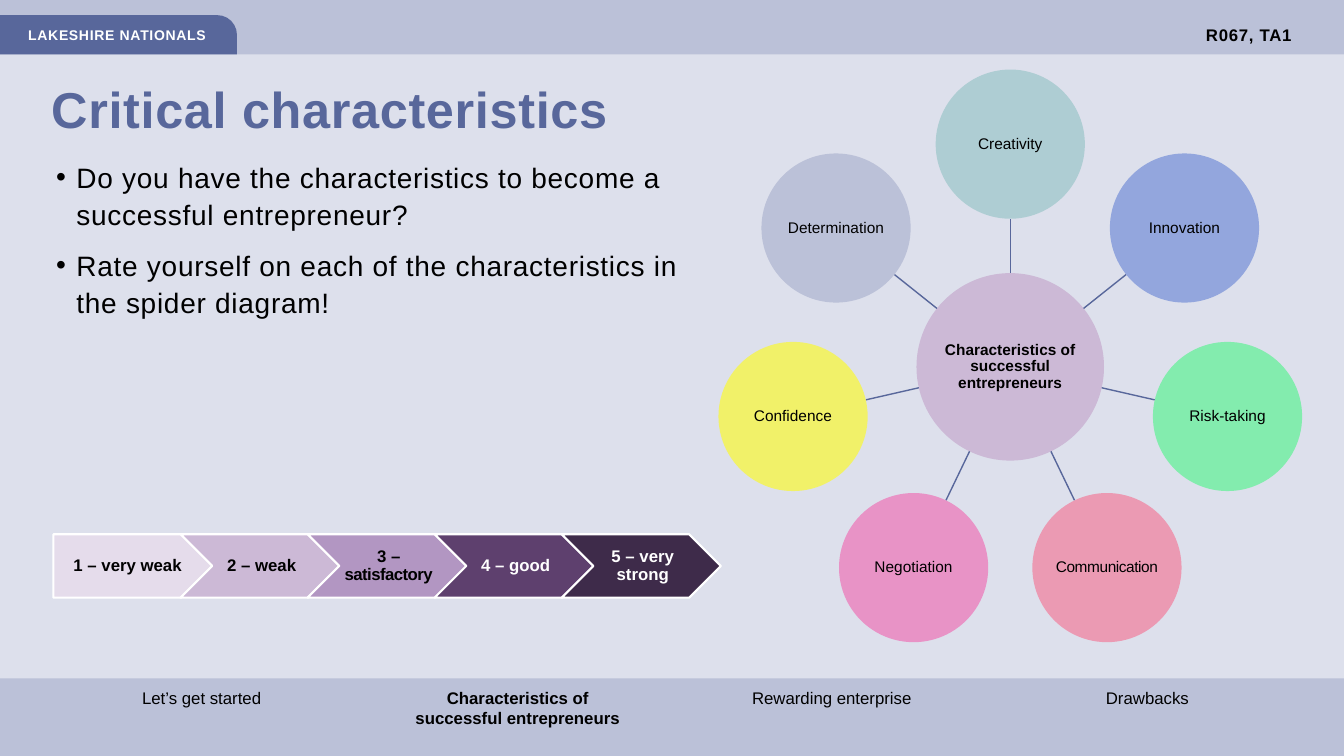
from math import cos, pi, sin

from pptx import Presentation
from pptx.dml.color import RGBColor
from pptx.enum import shapes, text
from pptx.oxml import parse_xml
from pptx.oxml.ns import nsdecls
from pptx.util import Inches, Pt

BACKGROUND, BAND, BLUE = "DDE0EC", "BBC1D8", "58679B"
BLACK, WHITE, LILAC = "000000", "FFFFFF", "CCB9D6"
SHAPE = shapes.MSO_SHAPE
ALIGN = text.PP_ALIGN
MIDDLE = text.MSO_ANCHOR.MIDDLE

presentation = Presentation()
presentation.slide_width = Inches(13.33)
presentation.slide_height = Inches(7.5)
slide = presentation.slides.add_slide(presentation.slide_layouts[6])
slide.background.fill.solid()
slide.background.fill.fore_color.rgb = RGBColor.from_string(BACKGROUND)


def add_block(kind, left, top, width, height, fill=None, line=None):
    """Add a flat preset shape, or a text box when kind is None."""
    box = [Inches(value) for value in (left, top, width, height)]
    if kind is None:
        shape = slide.shapes.add_textbox(*box)
    else:
        shape = slide.shapes.add_shape(kind, *box)
        shape.shadow.inherit = False
        shape.fill.solid()
        shape.fill.fore_color.rgb = RGBColor.from_string(fill)
        if line:
            shape.line.color.rgb = RGBColor.from_string(line)
            shape.line.width = Pt(1.5)
        else:
            shape.line.fill.background()
    shape.text_frame.word_wrap = True
    return shape


def write(shape, wording, size, color=BLACK, bold=False, align=ALIGN.LEFT,
          leading=1.0, tracking=0, anchor=text.MSO_ANCHOR.TOP, insets=None):
    """Fill a shape with text; insets are left, top, right, bottom in inches."""
    frame = shape.text_frame
    frame.text = wording
    frame.vertical_anchor = anchor
    if insets:
        (frame.margin_left, frame.margin_top,
         frame.margin_right, frame.margin_bottom) = map(Inches, insets)
    for paragraph in frame.paragraphs:
        paragraph.alignment = align
        paragraph.line_spacing = leading
        for run in paragraph.runs:
            run.font.name = "Arial"
            run.font.size = Pt(size)
            run.font.bold = bold
            run.font.color.rgb = RGBColor.from_string(color)
            if tracking:
                run.font._element.set("spc", str(round(tracking * 100)))


# Header and footer bands
add_block(SHAPE.RECTANGLE, 0, 0, 13.33, 0.54, BAND)
add_block(SHAPE.RECTANGLE, 0, 6.73, 13.33, 0.77, BAND)
tab = add_block(SHAPE.ROUND_1_RECTANGLE, 0, 0.15, 2.35, 0.39, BLUE)
tab.adjustments[0] = 0.5
write(tab, "LAKESHIRE NATIONALS", 10, WHITE, bold=True, tracking=0.5,
      anchor=MIDDLE, insets=(0.28, 0.05, 0, 0.05))
unit = add_block(None, 10.31, 0.15, 2.6, 0.39)
write(unit, "R067, TA1", 12, bold=True, align=ALIGN.RIGHT, tracking=0.5, anchor=MIDDLE)

# Title and bullets
title = add_block(None, 0.41, 0.67, 8, 0.8)
write(title, "Critical characteristics", 36, BLUE, bold=True, leading=1.1, tracking=0.5)
questions = add_block(None, 0.41, 1.51, 6.43, 1.78)
write(questions,
      "Do you have the characteristics to become a successful entrepreneur?\n"
      "Rate yourself on each of the characteristics in the spider diagram!",
      20, leading=1.1, tracking=0.5)
for paragraph in questions.text_frame.paragraphs:
    paragraph.space_before = Pt(10)
    properties = paragraph._p.get_or_add_pPr()
    properties.set("marL", str(Inches(0.25)))
    properties.set("indent", str(Inches(-0.2)))
    properties.append(parse_xml(f'<a:buFont {nsdecls("a")} typeface="Arial"/>'))
    properties.append(parse_xml(f'<a:buChar {nsdecls("a")} char="•"/>'))

# Spider diagram: traits spaced evenly around the hub, clockwise from the top
HUB_X, HUB_Y, HUB_RADIUS = 10.02, 3.64, 0.93
RING_RADIUS, TRAIT_RADIUS = 2.21, 0.74
CIRCLE_INSETS = (0.01, 0.01, 0.01, 0.01)
traits = [
    ("Creativity", "AECDD3"),
    ("Innovation", "93A6DD"),
    ("Risk-taking", "83ECAE"),
    ("Communication", "EB9AB3"),
    ("Negotiation", "E893C6"),
    ("Confidence", "F1F169"),
    ("Determination", BAND),
]
hub = add_block(SHAPE.OVAL, HUB_X - HUB_RADIUS, HUB_Y - HUB_RADIUS,
                2 * HUB_RADIUS, 2 * HUB_RADIUS, LILAC)
write(hub, "Characteristics of successful entrepreneurs", 11, bold=True,
      align=ALIGN.CENTER, leading=0.9, anchor=MIDDLE, insets=CIRCLE_INSETS)
for index, (trait, color) in enumerate(traits):
    angle = 2 * pi * index / len(traits)
    across, down = sin(angle), -cos(angle)
    spoke_end = RING_RADIUS - TRAIT_RADIUS
    spoke = slide.shapes.add_connector(
        shapes.MSO_CONNECTOR.STRAIGHT,
        Inches(HUB_X + HUB_RADIUS * across), Inches(HUB_Y + HUB_RADIUS * down),
        Inches(HUB_X + spoke_end * across), Inches(HUB_Y + spoke_end * down))
    spoke.line.color.rgb = RGBColor.from_string(BLUE)
    spoke.line.width = Pt(1)
    spoke._element.spPr.append(parse_xml(f'<a:effectLst {nsdecls("a")}/>'))
    circle = add_block(SHAPE.OVAL, HUB_X + RING_RADIUS * across - TRAIT_RADIUS,
                       HUB_Y + RING_RADIUS * down - TRAIT_RADIUS,
                       2 * TRAIT_RADIUS, 2 * TRAIT_RADIUS, color)
    write(circle, trait, 11, align=ALIGN.CENTER, leading=0.9, anchor=MIDDLE,
          tracking=-0.3 if trait == "Communication" else 0, insets=CIRCLE_INSETS)

# Rating scale
ratings = [
    ("1 – very weak", "E5DCEB", BLACK),
    ("2 – weak", LILAC, BLACK),
    ("3 – ", "B296C2", BLACK),
    ("4 – good", "5E406E", WHITE),
    ("5 – very strong", "3E2B4A", WHITE),
]
for index, (rating, fill, color) in enumerate(ratings):
    kind = SHAPE.CHEVRON if index else SHAPE.PENTAGON
    step = add_block(kind, 0.53 + 1.26 * index, 5.3, 1.58, 0.63, fill, WHITE)
    write(step, rating, 12, color, bold=True, align=ALIGN.CENTER, leading=0.9,
          anchor=MIDDLE, insets=(0.05 if index else 0.07, 0.04, 0.02, 0.04))
    if rating == "3 – ":
        run = step.text_frame.paragraphs[0].add_run()
        run.text = "satisfactory"
        run.font.name = "Arial"
        run.font.size = Pt(12)
        run.font.bold = True
        run.font.color.rgb = RGBColor.from_string(color)
        run.font._element.set("spc", "-40")

# Footer navigation, with the current section in bold
sections = [
    ("Let’s get started", 0.89, 2.17, False),
    ("Characteristics of successful entrepreneurs", 3.91, 2.4, True),
    ("Rewarding enterprise", 7.14, 2.17, False),
    ("Drawbacks", 10.27, 2.17, False),
]
for section, left, width, current in sections:
    link = add_block(None, left, 6.77, width, 0.5 if current else 0.3)
    write(link, section, 12, bold=current, align=ALIGN.CENTER,
          insets=(0.15, 0.05, 0.1, 0.05))

presentation.save("out.pptx")
